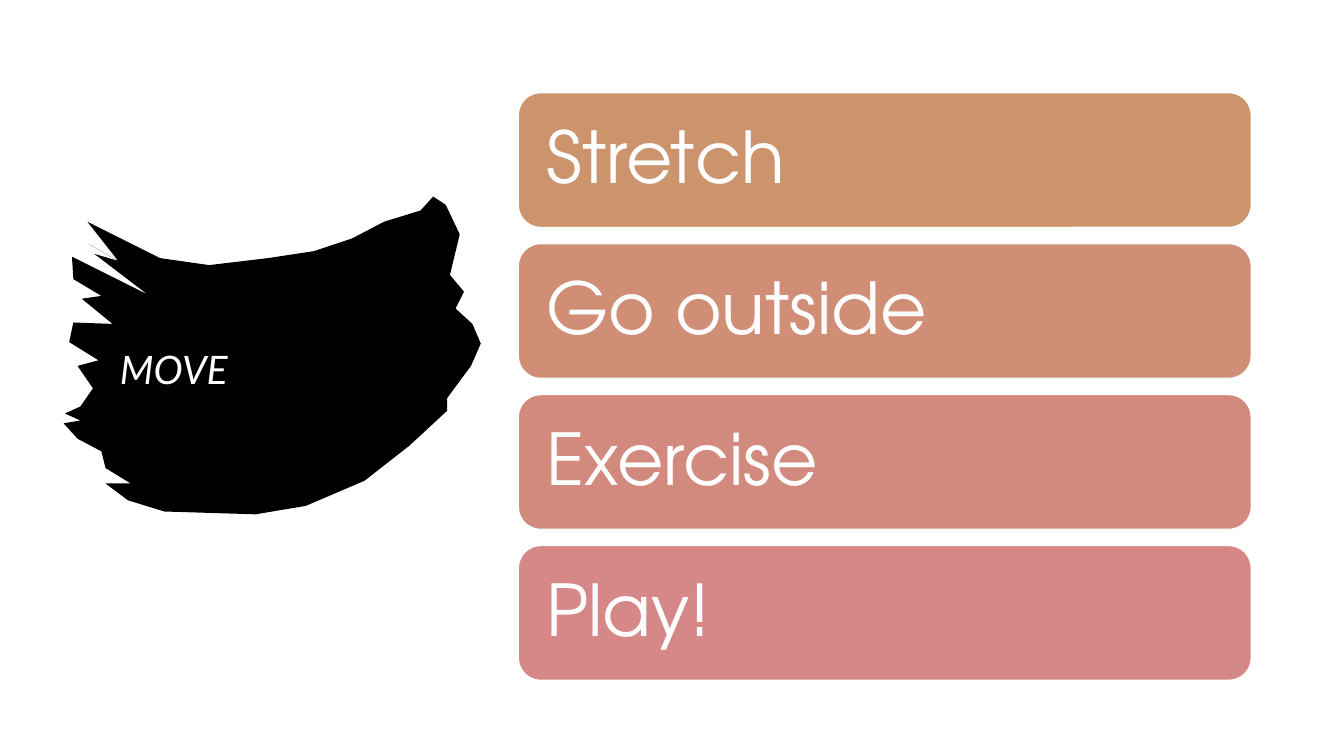
from collections import namedtuple

from pptx import Presentation
from pptx import util as u
from pptx.dml.color import RGBColor
from pptx.enum import shapes, text

Box = namedtuple("Box", "left top width height")

WHITE, BLACK = "FFFFFF", "000000"
# Brush outline in hundredths of the box's width and height.
BRUSH_OUTLINE = [
    (88.6, 0), (91.5, 2.5), (95, 12), (92.5, 24.5), (96, 30), (94, 35),
    (98, 40), (100, 46), (97.5, 53), (92, 63), (92, 67), (83, 78),
    (72, 89), (58, 97), (46, 99.7), (24, 98.6), (15.5, 95), (10, 90),
    (16, 90), (10, 85), (9, 80), (3.5, 76), (0, 71), (4, 70), (0.3, 68),
    (4, 66), (7, 60), (3.5, 53), (8.5, 51.5), (1.2, 45.5), (2.2, 39.5),
    (11.8, 40), (4.5, 32), (9, 31), (2.5, 26), (2, 19), (20, 30.5),
    (7.5, 18), (13, 20), (6, 15), (13, 20), (5.8, 8), (23, 19.5),
    (35, 21.5), (49, 19.5), (60, 17), (69, 13), (77, 8), (85.5, 4.5),
]


def color(hex_string):
    return RGBColor.from_string(hex_string)


def format_text(frame, font, size, italic=False):
    paragraph = frame.paragraphs[0]
    paragraph.alignment = text.PP_ALIGN.LEFT
    paragraph.line_spacing = 0.9
    run = paragraph.runs[0]
    run.font.name, run.font.size = font, u.Pt(size)
    run.font.italic = italic
    run.font.color.rgb = color(WHITE)
    frame.word_wrap = True
    frame.vertical_anchor = text.MSO_ANCHOR.MIDDLE


def add_brush_stroke(slide, box):
    """Draw the ragged brush mark, stretched to fill the box."""
    points = [(x * box.width / 100, y * box.height / 100) for x, y in BRUSH_OUTLINE]
    builder = slide.shapes.build_freeform(*points[0], scale=u.Pt(1))
    builder.add_line_segments(points[1:])
    brush = builder.convert_to_shape(u.Pt(box.left), u.Pt(box.top))
    brush.shadow.inherit = False
    brush.fill.solid()
    brush.fill.fore_color.rgb = color(BLACK)
    brush.line.fill.background()


def place_title(slide, box, wording):
    """Fill the title placeholder and bring it to the front."""
    title = slide.shapes.title
    title.left, title.top, title.width, title.height = map(u.Pt, box)
    title.text_frame.text = wording
    format_text(title.text_frame, "Lato", 28, italic=True)
    title.element.getparent().append(title.element)


def add_activity_bars(slide, box, activities, gap):
    """Stack one rounded bar per (wording, fill) pair, filling the box."""
    height = (box.height - gap * (len(activities) - 1)) / len(activities)
    for row, (wording, fill) in enumerate(activities):
        bar = slide.shapes.add_shape(
            shapes.MSO_SHAPE.ROUNDED_RECTANGLE, u.Pt(box.left),
            u.Pt(box.top + row * (height + gap)), u.Pt(box.width), u.Pt(height))
        bar.shadow.inherit = False
        bar.fill.solid()
        bar.fill.fore_color.rgb = color(fill)
        bar.line.color.rgb = color(WHITE)
        bar.line.width = u.Pt(1)
        frame = bar.text_frame
        frame.margin_left = frame.margin_right = u.Pt(15.3)
        frame.margin_top = frame.margin_bottom = u.Pt(15.3)
        frame.text = wording
        format_text(frame, "TeX Gyre Adventor", 51)


def build_move_slide(presentation):
    layout = presentation.slide_layouts.get_by_name("Title Only")
    slide = presentation.slides.add_slide(layout)
    slide.background.fill.solid()
    slide.background.fill.fore_color.rgb = color(WHITE)
    add_brush_stroke(slide, Box(45.4, 140.4, 298, 228))
    place_title(slide, Box(78.5, 206.6, 236.9, 118), "MOVE")
    add_activity_bars(slide, Box(370.2, 66.2, 523.6, 419.8), [
        ("Stretch", "CC946C"),
        ("Go outside", "CF8E75"),
        ("Exercise", "D38A7E"),
        ("Play!", "D68787"),
    ], gap=11.5)


def main():
    presentation = Presentation()
    presentation.slide_width, presentation.slide_height = u.Pt(960), u.Pt(540)
    build_move_slide(presentation)
    presentation.save("out.pptx")


if __name__ == "__main__":
    main()
